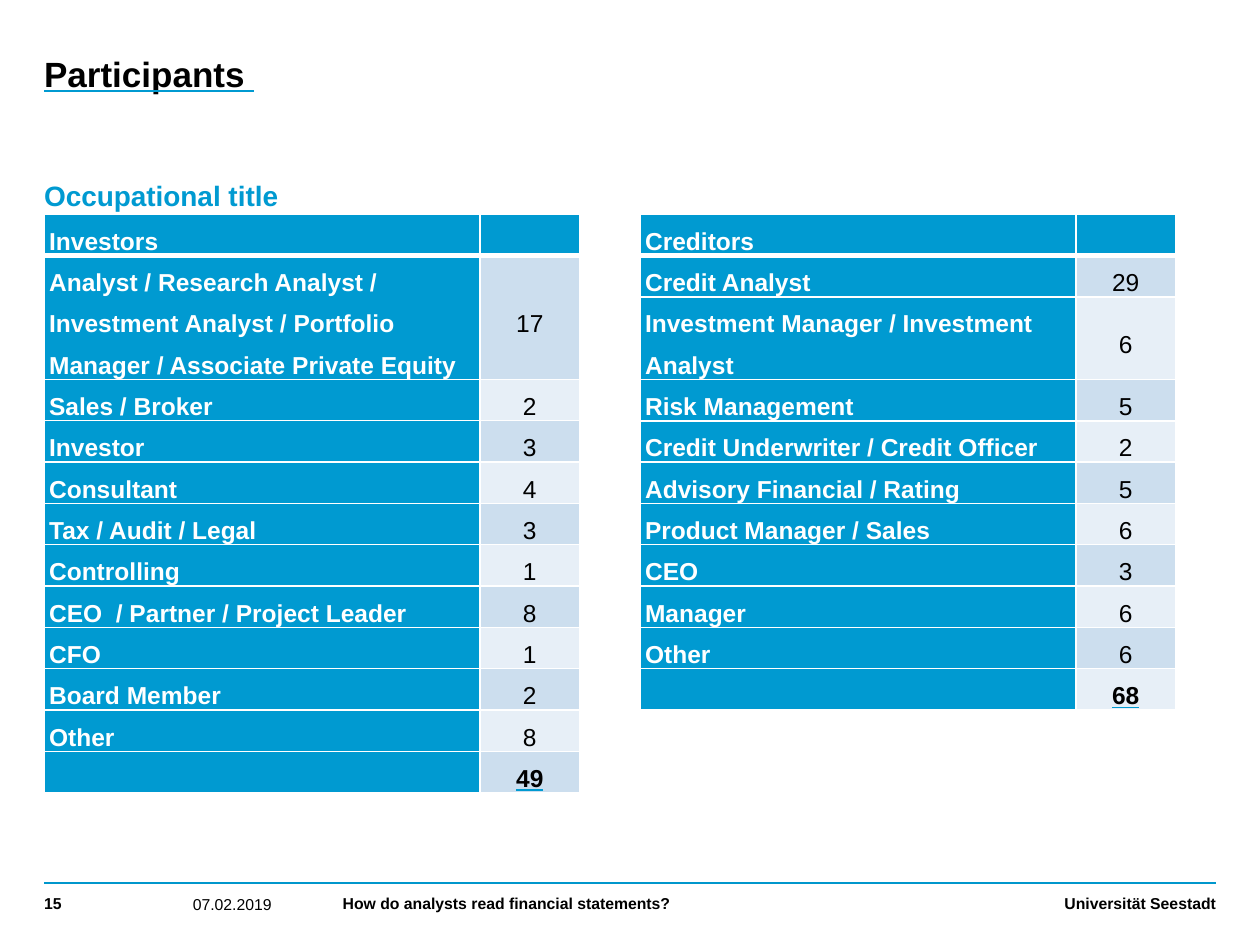
from lxml.etree import SubElement
from pptx import Presentation
from pptx.dml.color import RGBColor
from pptx.enum.shapes import MSO_CONNECTOR
from pptx.enum.text import MSO_ANCHOR, MSO_AUTO_SIZE, PP_ALIGN
from pptx.oxml.ns import qn
from pptx.util import Inches, Pt

INVESTORS = [
    ("Investors", ""),
    ("Analyst / Research Analyst / Investment Analyst / Portfolio "
     "Manager / Associate Private Equity", "17"),
    ("Sales / Broker", "2"),
    ("Investor", "3"),
    ("Consultant", "4"),
    ("Tax / Audit / Legal", "3"),
    ("Controlling", "1"),
    ("CEO  / Partner / Project Leader", "8"),
    ("CFO", "1"),
    ("Board Member", "2"),
    ("Other", "8"),
    ("", "49"),
]
CREDITORS = [
    ("Creditors", ""),
    ("Credit Analyst", "29"),
    ("Investment Manager / Investment Analyst", "6"),
    ("Risk Management", "5"),
    ("Credit Underwriter / Credit Officer", "2"),
    ("Advisory Financial / Rating", "5"),
    ("Product Manager / Sales", "6"),
    ("CEO", "3"),
    ("Manager", "6"),
    ("Other", "6"),
    ("", "68"),
]


def color(value):
    return RGBColor.from_string(value)


def add_solid_fill(parent, value):
    fill = SubElement(parent, qn("a:solidFill"))
    SubElement(fill, qn("a:srgbClr")).set("val", value)


class SlideBuilder:
    font = "Arial"
    blue = "009AD1"
    rule_blue = "0097CC"
    black = "000000"
    white = "FFFFFF"
    bands = ("CCDEEE", "E7EFF7")

    def __init__(self, presentation):
        self.slide = presentation.slides.add_slide(presentation.slide_layouts[1])

    def add_run(self, paragraph, text, size, value, bold=True, underline=False):
        run = paragraph.add_run()
        run.text = text
        run.font.name = self.font
        run.font.size = Pt(size)
        run.font.bold = bold
        run.font.color.rgb = color(value)
        if underline:
            run.font.underline = True
            underline_fill = SubElement(run.font._element, qn("a:uFill"))
            add_solid_fill(underline_fill, self.blue)
            # The underline colour stands before the typeface
            run.font._element.find(qn("a:latin")).addprevious(underline_fill)

    def set_frame(self, shape, anchor, bottom=0):
        frame = shape.text_frame
        frame.word_wrap = True
        frame.auto_size = MSO_AUTO_SIZE.NONE
        frame.vertical_anchor = anchor
        frame.margin_left = frame.margin_top = frame.margin_right = 0
        frame.margin_bottom = Inches(bottom)
        return frame.paragraphs[0]

    def fill_placeholder(self, shape, box, text, size, value, spacing, underline=False):
        shape.left, shape.top, shape.width, shape.height = map(Inches, box)
        paragraph = self.set_frame(shape, MSO_ANCHOR.TOP)
        paragraph.alignment = PP_ALIGN.LEFT
        paragraph.line_spacing = spacing
        paragraph.space_before = Pt(0)
        properties = paragraph._p.get_or_add_pPr()
        properties.set("marL", "0")
        properties.set("indent", "0")
        SubElement(properties, qn("a:buNone"))
        self.add_run(paragraph, text, size, value, underline=underline)

    def add_footer(self, left, width, text, bold=True, align=PP_ALIGN.LEFT):
        box = self.slide.shapes.add_textbox(
            Inches(left), Inches(7.06), Inches(width), Inches(0.24))
        if bold:
            paragraph = self.set_frame(box, MSO_ANCHOR.BOTTOM, 0.06)
        else:
            paragraph = self.set_frame(box, MSO_ANCHOR.MIDDLE)
        paragraph.alignment = align
        self.add_run(paragraph, text, 9, self.black, bold)

    def add_rule(self, left, right, top):
        line = self.slide.shapes.add_connector(
            MSO_CONNECTOR.STRAIGHT, Inches(left), Inches(top), Inches(right), Inches(top))
        line.line.color.rgb = color(self.rule_blue)
        line.line.width = Pt(1)
        SubElement(line._element.spPr, qn("a:effectLst"))

    def style_cell(self, cell, fill, top, bottom):
        properties = cell._tc.get_or_add_tcPr()
        for side, width in (("L", 1), ("R", 1), ("T", top), ("B", bottom)):
            border = SubElement(properties, qn(f"a:ln{side}"))
            border.set("w", str(Pt(width)))
            add_solid_fill(border, self.white)
        cell.fill.solid()
        cell.fill.fore_color.rgb = color(fill)
        cell.vertical_anchor = MSO_ANCHOR.MIDDLE
        cell.margin_left = cell.margin_right = Inches(0.04)
        cell.margin_top = cell.margin_bottom = 0

    def add_count_table(self, left, entries):
        row_height = Inches(0.19)
        table = self.slide.shapes.add_table(
            len(entries), 2, Inches(left), Inches(1.7),
            Inches(4.25), row_height * len(entries)).table
        for column, width in zip(table.columns, (3.46, 0.79)):
            column.width = Inches(width)
        for row, entry in enumerate(entries):
            table.rows[row].height = row_height
            is_total = row == len(entries) - 1
            for column, text in enumerate(entry):
                is_count = column == 1 and row > 0
                cell = table.cell(row, column)
                fill = self.bands[(row - 1) % 2] if is_count else self.blue
                self.style_cell(cell, fill, 3 if row == 1 else 1, 3 if row == 0 else 1)
                if not text:
                    continue
                paragraph = cell.text_frame.paragraphs[0]
                paragraph.line_spacing = 1.5
                paragraph.alignment = PP_ALIGN.CENTER if is_count else PP_ALIGN.LEFT
                self.add_run(paragraph, text, 14,
                             self.black if is_count else self.white,
                             bold=not is_count or is_total, underline=is_total)


def main():
    presentation = Presentation()
    presentation.slide_width = Inches(10)
    presentation.slide_height = Inches(7.5)
    builder = SlideBuilder(presentation)

    # Title and subtitle
    title, body = builder.slide.placeholders
    builder.fill_placeholder(title, (0.35, 0.44, 9.29, 0.87), "Participants ",
                             20, builder.black, 0.95, underline=True)
    builder.fill_placeholder(body, (0.35, 1.39, 4.57, 4.49), "Occupational title",
                             16, builder.blue, 1.1)

    # Footer
    builder.add_rule(0.35, 9.65, 7.01)
    builder.add_footer(6.26, 3.39, "Universität Seestadt", align=PP_ALIGN.RIGHT)
    builder.add_footer(2.72, 4.65, "How do analysts read financial statements?")
    builder.add_footer(0.35, 1.02, "15")
    builder.add_footer(1.53, 1.02, "07.02.2019", bold=False)

    # Participant tables
    builder.add_count_table(0.35, INVESTORS)
    builder.add_count_table(5.08, CREDITORS)

    presentation.save("out.pptx")


if __name__ == "__main__":
    main()
